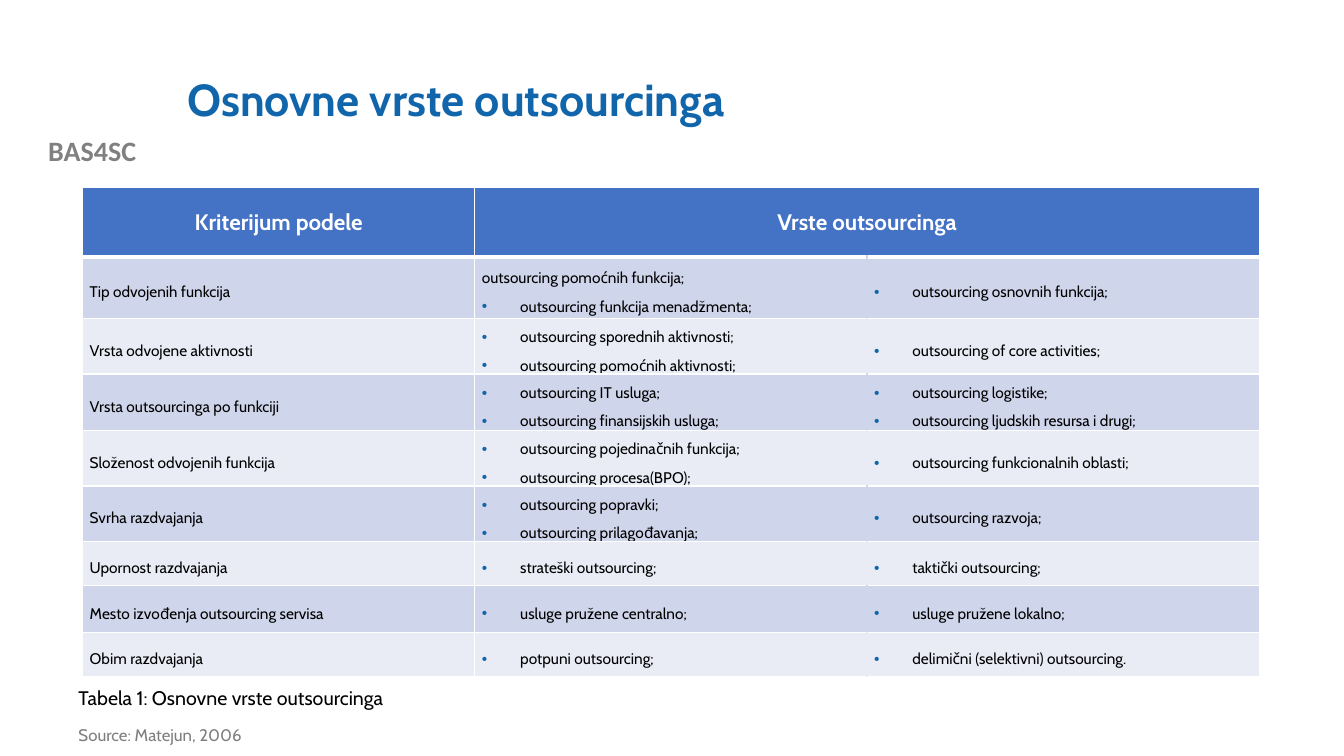
import pptx
import pptx.dml.color
import pptx.enum.text
import pptx.oxml.ns
import pptx.util
from lxml import etree

RGBColor = pptx.dml.color.RGBColor
Inches = pptx.util.Inches
Pt = pptx.util.Pt
ALIGN = pptx.enum.text.PP_ALIGN
MIDDLE = pptx.enum.text.MSO_ANCHOR.MIDDLE
qn = pptx.oxml.ns.qn

BLUE = RGBColor(0x10, 0x65, 0xAB)
HEADER_BLUE = RGBColor(0x44, 0x72, 0xC4)
BANDS = [RGBColor(0xCF, 0xD5, 0xEA), RGBColor(0xE9, 0xEB, 0xF5)]
GRAY = RGBColor(0x80, 0x80, 0x80)
SOURCE_GRAY = RGBColor(0x7F, 0x7F, 0x7F)
WHITE = RGBColor(0xFF, 0xFF, 0xFF)
BLACK = RGBColor(0, 0, 0)

HEADERS = ["Kriterijum podele", "Vrste outsourcinga"]
ROWS = [
    ("Tip odvojenih funkcija",
     ["outsourcing pomoćnih funkcija;", "outsourcing funkcija menadžmenta;"],
     ["outsourcing osnovnih funkcija;"]),
    ("Vrsta odvojene aktivnosti",
     ["outsourcing sporednih aktivnosti;", "outsourcing pomoćnih aktivnosti;"],
     ["outsourcing of core activities;"]),
    ("Vrsta outsourcinga po funkciji",
     ["outsourcing IT usluga;", "outsourcing finansijskih usluga;"],
     ["outsourcing logistike;", "outsourcing ljudskih resursa i drugi;"]),
    ("Složenost odvojenih funkcija",
     ["outsourcing pojedinačnih funkcija;", "outsourcing procesa(BPO);"],
     ["outsourcing funkcionalnih oblasti;"]),
    ("Svrha razdvajanja",
     ["outsourcing popravki;", "outsourcing prilagođavanja;"],
     ["outsourcing razvoja;"]),
    ("Upornost razdvajanja", ["strateški outsourcing;"], ["taktički outsourcing;"]),
    ("Mesto izvođenja outsourcing servisa",
     ["usluge pružene centralno;"], ["usluge pružene lokalno;"]),
    ("Obim razdvajanja",
     ["potpuni outsourcing;"], ["delimični (selektivni) outsourcing."]),
]
ROW_HEIGHTS = [0.69, 0.61, 0.46, 0.56, 0.46, 0.46, 0.44, 0.46, 0.44]
COLUMN_WIDTH = 3.89


def paint_cell(cell, fill, edges):
    """Fill the cell and draw its edges, given as {tag: (colour, points)}."""
    properties = cell._tc.get_or_add_tcPr()
    for tag in ("lnL", "lnR", "lnT", "lnB"):
        color, points = edges.get(tag, (WHITE, 1))
        line = etree.SubElement(properties, qn("a:" + tag), w=str(Pt(points)))
        solid = etree.SubElement(line, qn("a:solidFill"))
        etree.SubElement(solid, qn("a:srgbClr"), val=str(color))
    cell.fill.solid()
    cell.fill.fore_color.rgb = fill
    cell.vertical_anchor = MIDDLE


def format_paragraph(paragraph, size, color, bold=False, font_name="Cabin"):
    for run in paragraph.runs:
        run.font.name = font_name
        run.font.size = Pt(size)
        run.font.bold = bold
        run.font.color.rgb = color


presentation = pptx.Presentation()
presentation.slide_width = Inches(13.33)
presentation.slide_height = Inches(7.5)
slide = presentation.slides.add_slide(presentation.slide_layouts[6])

# Project label, title, source and table caption
labels = [
    ("BAS4SC", (0, 1.28, 1.83, 0.44), 20, GRAY, True, "Calibri", ALIGN.CENTER, 1),
    ("Osnovne vrste outsourcinga", (1.76, 0.4, 10.66, 1.22), 32, BLUE, True,
     "Cabin", ALIGN.LEFT, 0.9),
    ("Source: Matejun, 2006", (0.68, 7.16, 5.01, 0.34), 12, SOURCE_GRAY, False,
     "Cabin", ALIGN.LEFT, 0.9),
    ("Tabela 1: Osnovne vrste outsourcinga", (0.68, 6.76, 4.39, 0.34), 14, BLACK,
     False, "Cabin", ALIGN.LEFT, 1),
]
for text, place, size, color, bold, font_name, alignment, spacing in labels:
    text_frame = slide.shapes.add_textbox(*map(Inches, place)).text_frame
    text_frame.word_wrap = True
    text_frame.text = text
    if size == 32:
        text_frame.vertical_anchor = MIDDLE
    paragraph = text_frame.paragraphs[0]
    paragraph.alignment = alignment
    paragraph.line_spacing = spacing
    format_paragraph(paragraph, size, color, bold, font_name)

# Table
table = slide.shapes.add_table(
    len(ROW_HEIGHTS), 3, Inches(0.82), Inches(1.86),
    Inches(3 * COLUMN_WIDTH), Inches(sum(ROW_HEIGHTS))).table
for column in table.columns:
    column.width = Inches(COLUMN_WIDTH)
for row, height in zip(table.rows, ROW_HEIGHTS):
    row.height = Inches(height)

table.cell(0, 1).merge(table.cell(0, 2))
for cell in table.rows[0].cells:
    paint_cell(cell, HEADER_BLUE, {"lnB": (WHITE, 3)})
for column_index, header in enumerate(HEADERS):
    cell = table.cell(0, column_index)
    cell.text_frame.text = header
    paragraph = cell.text_frame.paragraphs[0]
    paragraph.alignment = ALIGN.CENTER
    format_paragraph(paragraph, 16, WHITE, True)

for row_index, (criterion, left_types, right_types) in enumerate(ROWS, start=1):
    band = BANDS[(row_index - 1) % 2]
    for column_index, lines in enumerate([[criterion], left_types, right_types]):
        cell = table.cell(row_index, column_index)
        # The edge between the two columns of types blends into the band
        edges = [{}, {"lnR": (band, 1)}, {"lnL": (band, 1)}][column_index]
        if row_index == 1:
            edges["lnT"] = (WHITE, 3)
        paint_cell(cell, band, edges)
        cell.margin_left = cell.margin_right = Inches(0.07)
        cell.margin_top = cell.margin_bottom = 0
        cell.text_frame.text = "\n".join(lines)
        for paragraph in cell.text_frame.paragraphs:
            # The very first type stands without a bullet
            if column_index > 0 and paragraph.text != ROWS[0][1][0]:
                properties = paragraph._p.get_or_add_pPr()
                properties.set("marL", str(Inches(0.38)))
                properties.set("indent", str(-Inches(0.38)))
                bullet_color = etree.SubElement(properties, qn("a:buClr"))
                etree.SubElement(bullet_color, qn("a:srgbClr"), val=str(BLUE))
                etree.SubElement(properties, qn("a:buFont"), typeface="Arial")
                etree.SubElement(properties, qn("a:buChar"), char="•")
            paragraph.alignment = ALIGN.JUSTIFY
            paragraph.line_spacing = 1.5
            format_paragraph(paragraph, 11, BLACK)
        if column_index != 1:
            paragraph.space_after = Pt(6)

presentation.save("out.pptx")
